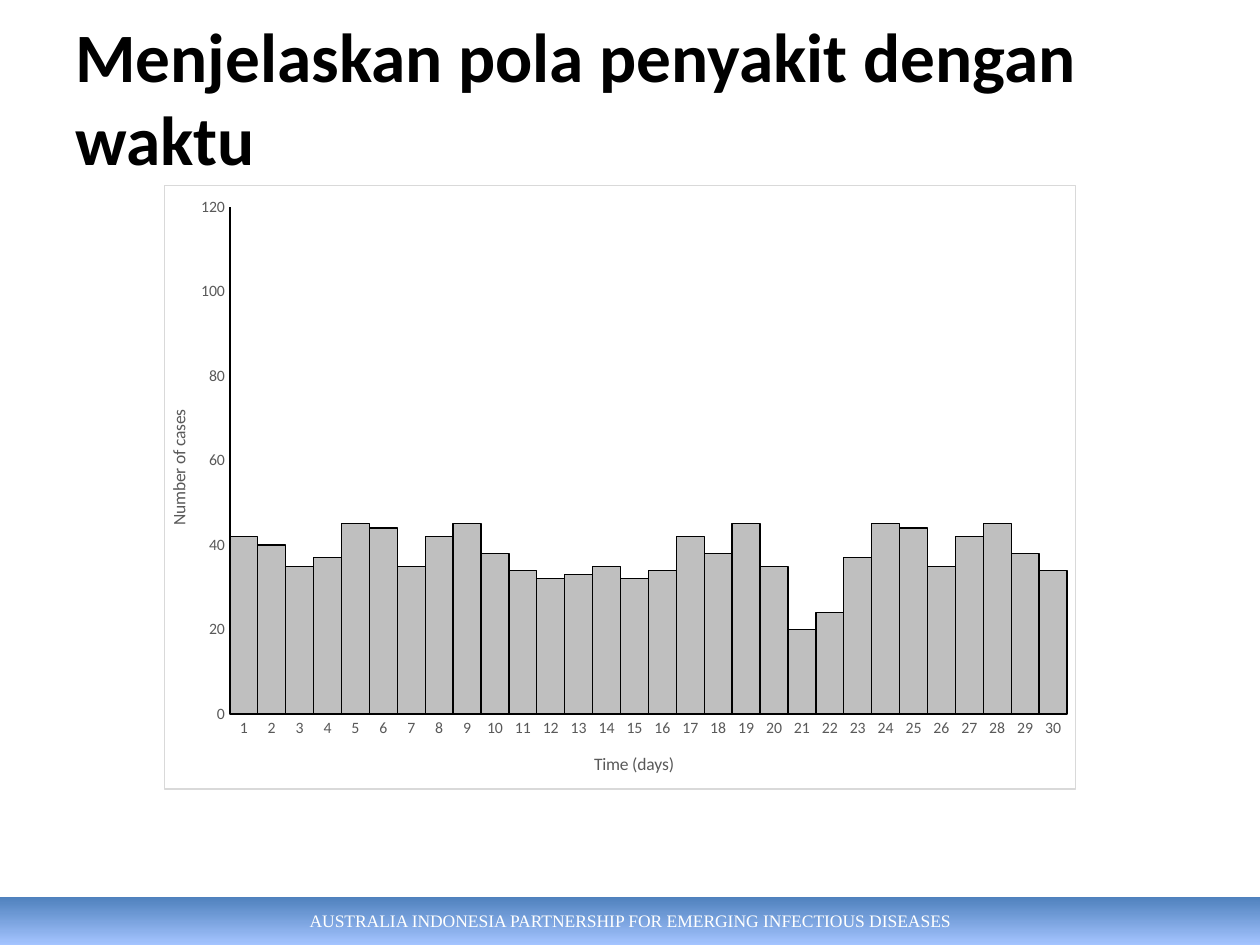
from pptx import Presentation
from pptx.chart.data import CategoryChartData as Data
from pptx.dml.color import RGBColor
from pptx.enum.chart import XL_CHART_TYPE as Kind, XL_TICK_MARK as Tick
from pptx.enum.shapes import MSO_SHAPE as Shape
from pptx.enum.text import MSO_ANCHOR as Anchor, PP_ALIGN as Align
from pptx.oxml import parse_xml
from pptx.oxml.ns import nsdecls, qn
from pptx.util import Cm, Pt

BLACK = RGBColor(0x00, 0x00, 0x00)
WHITE = RGBColor(0xFF, 0xFF, 0xFF)
GRAY = RGBColor(0x59, 0x59, 0x59)
BAR = RGBColor(0xBF, 0xBF, 0xBF)
EDGE = RGBColor(0xD9, 0xD9, 0xD9)
BLUE = RGBColor(0x4F, 0x81, 0xBD)
SKY = RGBColor(0xA4, 0xC4, 0xFF)

CASES = [42, 40, 35, 37, 45, 44, 35, 42, 45, 38,
         34, 32, 33, 35, 32, 34, 42, 38, 45, 35,
         20, 24, 37, 45, 44, 35, 42, 45, 38, 34]
PLOT = {"x": 0.072, "y": 0.035, "w": 0.919, "h": 0.841}


def style(font, size, color, name="Calibri", bold=False):
    font.name = name
    font.size = Pt(size)
    font.bold = bold
    font.color.rgb = color


def rule(line, color):
    line.color.rgb = color
    line.width = Pt(0.75)


def add_title(slide, box, text):
    frame = slide.shapes.add_textbox(*box).text_frame
    frame.word_wrap = True
    frame.vertical_anchor = Anchor.MIDDLE
    para = frame.paragraphs[0]
    para.text = text
    style(para.font, 39.6, BLACK, bold=True)


def add_footer(slide, box, text):
    band = slide.shapes.add_shape(Shape.RECTANGLE, *box)
    band.shadow.inherit = False
    band.line.fill.background()
    band.fill.gradient()
    band.fill.gradient_angle = 270
    for stop, color, place in zip(band.fill.gradient_stops, (BLUE, SKY), (0, 1)):
        stop.color.rgb = color
        stop.position = place
    frame = band.text_frame
    frame.vertical_anchor = Anchor.MIDDLE
    para = frame.paragraphs[0]
    para.text = text
    para.alignment = Align.CENTER
    style(para.font, 10, WHITE, "Times New Roman")


def set_axis(axis, title):
    axis.has_major_gridlines = False
    axis.major_tick_mark = axis.minor_tick_mark = Tick.NONE
    style(axis.tick_labels.font, 9, GRAY)
    rule(axis.format.line, BLACK)
    para = axis.axis_title.text_frame.paragraphs[0]
    para.text = title
    style(para.font, 10, GRAY)


def set_frame(chart):
    space = chart.element
    space.find(qn("c:chart")).addnext(parse_xml(
        f'<c:spPr {nsdecls("c", "a")}>'
        f'<a:solidFill><a:srgbClr val="{WHITE}"/></a:solidFill>'
        f'<a:ln w="{Pt(0.75)}"><a:solidFill><a:srgbClr val="{EDGE}"/>'
        '</a:solidFill></a:ln></c:spPr>'))
    area = space.find(qn("c:chart")).find(qn("c:plotArea"))
    for old in area.findall(qn("c:layout")):
        area.remove(old)
    sides = "".join(f'<c:{key} val="{val}"/>' for key, val in PLOT.items())
    area.insert(0, parse_xml(
        f'<c:layout {nsdecls("c")}><c:manualLayout>'
        '<c:layoutTarget val="inner"/><c:xMode val="edge"/>'
        f'<c:yMode val="edge"/>{sides}</c:manualLayout></c:layout>'))


def add_cases(slide, box):
    data = Data()
    data.categories = [str(day) for day in range(1, len(CASES) + 1)]
    data.add_series("Series 1", CASES)
    chart = slide.shapes.add_chart(Kind.COLUMN_CLUSTERED, *box, data).chart
    chart.has_legend = False
    chart.has_title = False
    style(chart.font, 10, BLACK)
    plot = chart.plots[0]
    plot.gap_width = 0
    plot.overlap = 100
    plot.vary_by_categories = False
    bars = plot.series[0].format
    bars.fill.solid()
    bars.fill.fore_color.rgb = BAR
    rule(bars.line, BLACK)
    set_axis(chart.category_axis, "Time (days)")
    set_axis(chart.value_axis, "Number of cases")
    chart.value_axis.minimum_scale = 0
    chart.value_axis.maximum_scale = 120
    chart.value_axis.major_unit = 20
    set_frame(chart)


def main():
    deck = Presentation()
    deck.slide_width, deck.slide_height = Cm(25.4), Cm(19.05)
    slide = deck.slides.add_slide(deck.slide_layouts[6])
    tall = Cm(0.97)
    add_footer(slide, (0, deck.slide_height - tall, deck.slide_width, tall),
               "AUSTRALIA INDONESIA PARTNERSHIP FOR EMERGING INFECTIOUS DISEASES")
    add_title(slide, (Cm(1.27), Cm(0.76), Cm(22.86), Cm(2.36)),
              "Menjelaskan pola penyakit dengan waktu")
    add_cases(slide, (Cm(3.3), Cm(3.73), Cm(18.39), Cm(12.19)))
    deck.save("out.pptx")


if __name__ == "__main__":
    main()
